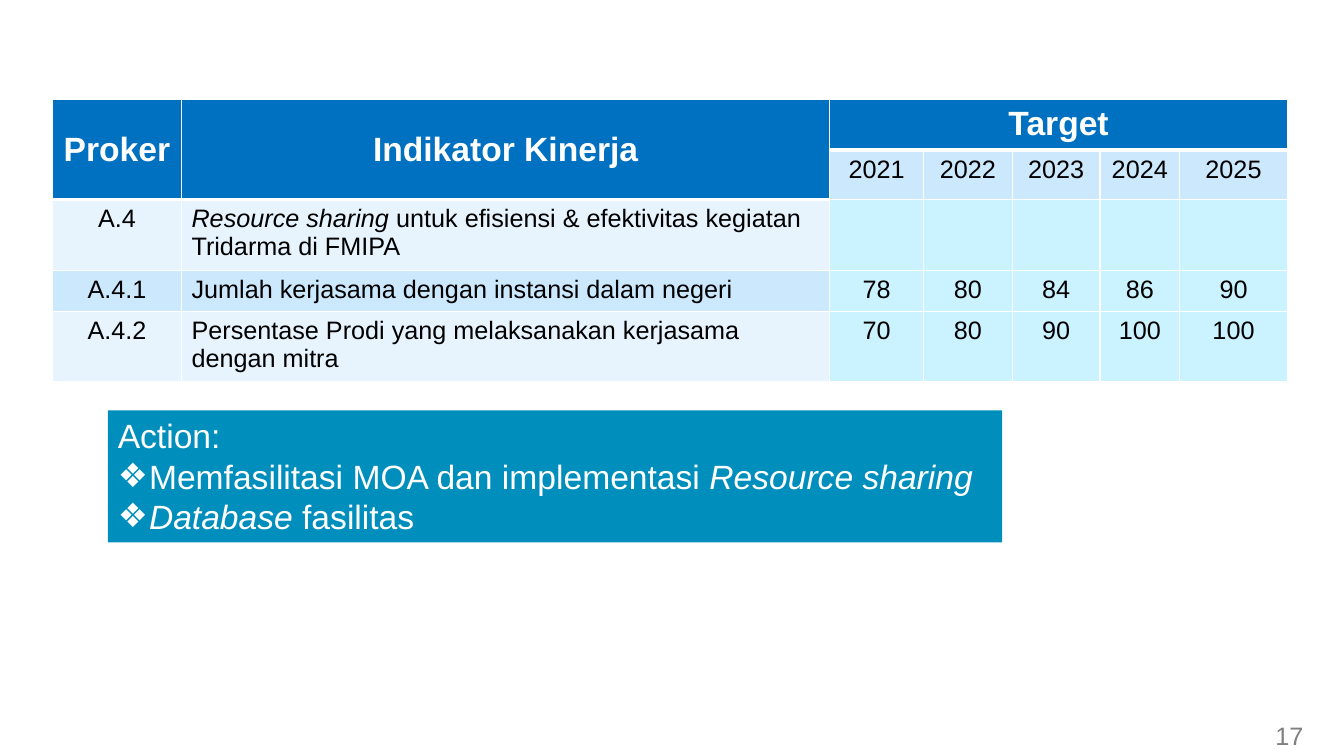
from dataclasses import dataclass

from lxml import etree
from pptx import Presentation
from pptx import util as u
from pptx.dml.color import RGBColor
from pptx.enum import shapes, text
from pptx.oxml import ns


@dataclass(frozen=True)
class Theme:
    font: str = "Arial"
    heading: int = 24
    body: int = 18
    white: str = "FFFFFF"
    black: str = "000000"
    grey: str = "808080"
    header: str = "0070C0"
    panel: str = "008EBC"
    band: str = "CCE8FD"
    pale: str = "E7F4FE"
    target: str = "CBF2FF"


COLUMNS = [1.28, 6.43, 0.93, 0.88, 0.87, 0.79, 1.07]
HEIGHTS = [0.5, 0.49, 0.7, 0.41, 0.7]
ROWS = [
    ["Proker", "Indikator Kinerja", "Target", "", "", "", ""],
    ["", "", "2021", "2022", "2023", "2024", "2025"],
    ["A.4", "*Resource sharing* untuk efisiensi & efektivitas kegiatan Tridarma di FMIPA",
     "", "", "", "", ""],
    ["A.4.1", "Jumlah kerjasama dengan instansi dalam negeri", "78", "80", "84", "86", "90"],
    ["A.4.2", "Persentase Prodi yang melaksanakan kerjasama dengan mitra",
     "70", "80", "90", "100", "100"],
]
ACTIONS = ["Memfasilitasi MOA dan implementasi *Resource sharing*", "*Database* fasilitas"]


def is_header(row, column):
    """Tell whether a cell belongs to the dark table heading."""
    return row == 0 or (row == 1 and column < 2)


class SlideBuilder:
    """Draws themed elements on the current page."""

    def __init__(self, page, theme):
        self.page = page
        self.theme = theme

    def paragraph(self, para, words, size, color, bold=False, align=text.PP_ALIGN.LEFT):
        """Fill a paragraph, setting words between asterisks in italics."""
        for index, part in enumerate(words.split("*")):
            if part:
                span = para.add_run()
                span.text = part
                if index % 2:
                    span.font.italic = True
        para.alignment = align
        font = para.font
        font.name, font.size, font.bold = self.theme.font, u.Pt(size), bold
        font.color.rgb = RGBColor.from_string(color)

    def bullet(self, para, symbol, indent):
        """Give a paragraph a hanging bullet."""
        properties = para._p.get_or_add_pPr()
        properties.set("marL", str(u.Inches(indent)))
        properties.set("indent", str(-u.Inches(indent)))
        etree.SubElement(properties, ns.qn("a:buFont")).set("typeface", self.theme.font)
        etree.SubElement(properties, ns.qn("a:buChar")).set("char", symbol)

    def borders(self, cell, top, bottom):
        """Draw the white edges of a cell."""
        properties = cell._tc.get_or_add_tcPr()
        edges = {"L": 1, "R": 1, "T": top, "B": bottom}
        for index, (side, width) in enumerate(edges.items()):
            line = etree.Element(ns.qn(f"a:ln{side}"), w=str(u.Pt(width)))
            fill = etree.SubElement(line, ns.qn("a:solidFill"))
            etree.SubElement(fill, ns.qn("a:srgbClr")).set("val", self.theme.white)
            properties.insert(index, line)

    def cell_fill(self, row, column):
        """Choose the fill colour of a cell."""
        if is_header(row, column):
            return self.theme.header
        if row > 1 and column > 1:
            return self.theme.target
        return self.theme.band if row % 2 else self.theme.pale

    def table(self, left, top):
        """Add the target table."""
        frame = self.page.shapes.add_table(
            len(ROWS), len(COLUMNS), u.Inches(left), u.Inches(top),
            u.Inches(sum(COLUMNS)), u.Inches(sum(HEIGHTS)))
        table = frame.table
        for column, width in zip(table.columns, COLUMNS):
            column.width = u.Inches(width)
        for row, height in zip(table.rows, HEIGHTS):
            row.height = u.Inches(height)
        for row, entries in enumerate(ROWS):
            for column, words in enumerate(entries):
                self.cell(table.cell(row, column), row, column, words)
        for column in range(2):
            table.cell(0, column).merge(table.cell(1, column))
        table.cell(0, 2).merge(table.cell(0, 6))

    def cell(self, cell, row, column, words):
        """Style and fill one table cell."""
        theme, header = self.theme, is_header(row, column)
        cell.fill.solid()
        cell.fill.fore_color.rgb = RGBColor.from_string(self.cell_fill(row, column))
        self.borders(cell, 3 if row and is_header(row - 1, column) else 1, 3 if header else 1)
        if header and column < 2:
            cell.vertical_anchor = text.MSO_ANCHOR.MIDDLE
        left = column == 1 and not header
        self.paragraph(cell.text_frame.paragraphs[0], words,
                       theme.heading if header and row == 0 else theme.body,
                       theme.white if header else theme.black, header,
                       text.PP_ALIGN.LEFT if left else text.PP_ALIGN.CENTER)

    def action_panel(self, left, top, width, height):
        """Add the filled list of actions."""
        theme = self.theme
        box = self.page.shapes.add_shape(
            shapes.MSO_SHAPE.RECTANGLE, *map(u.Inches, (left, top, width, height)))
        box.shadow.inherit = False
        box.fill.solid()
        box.fill.fore_color.rgb = RGBColor.from_string(theme.panel)
        box.line.fill.background()
        frame = box.text_frame
        frame.word_wrap = False
        frame.vertical_anchor = text.MSO_ANCHOR.TOP
        self.paragraph(frame.paragraphs[0], "Action:", theme.heading, theme.white)
        for words in ACTIONS:
            para = frame.add_paragraph()
            self.bullet(para, "❖", 0.31)
            self.paragraph(para, words, theme.heading, theme.white)

    def page_number(self, left, top, width, height, number):
        """Add the page number."""
        box = self.page.shapes.add_textbox(*map(u.Inches, (left, top, width, height)))
        box.text_frame.word_wrap = True
        self.paragraph(box.text_frame.paragraphs[0], number, self.theme.body, self.theme.grey)


def main():
    """Build and save the deck."""
    deck = Presentation()
    deck.slide_width, deck.slide_height = u.Inches(13.33), u.Inches(7.5)
    builder = SlideBuilder(deck.slides.add_slide(deck.slide_layouts[6]), Theme())
    builder.table(0.52, 0.99)
    builder.action_panel(1.07, 4.07, 8.87, 1.31)
    builder.page_number(12.55, 7.1, 0.55, 0.4, "17")
    deck.save("out.pptx")


if __name__ == "__main__":
    main()
